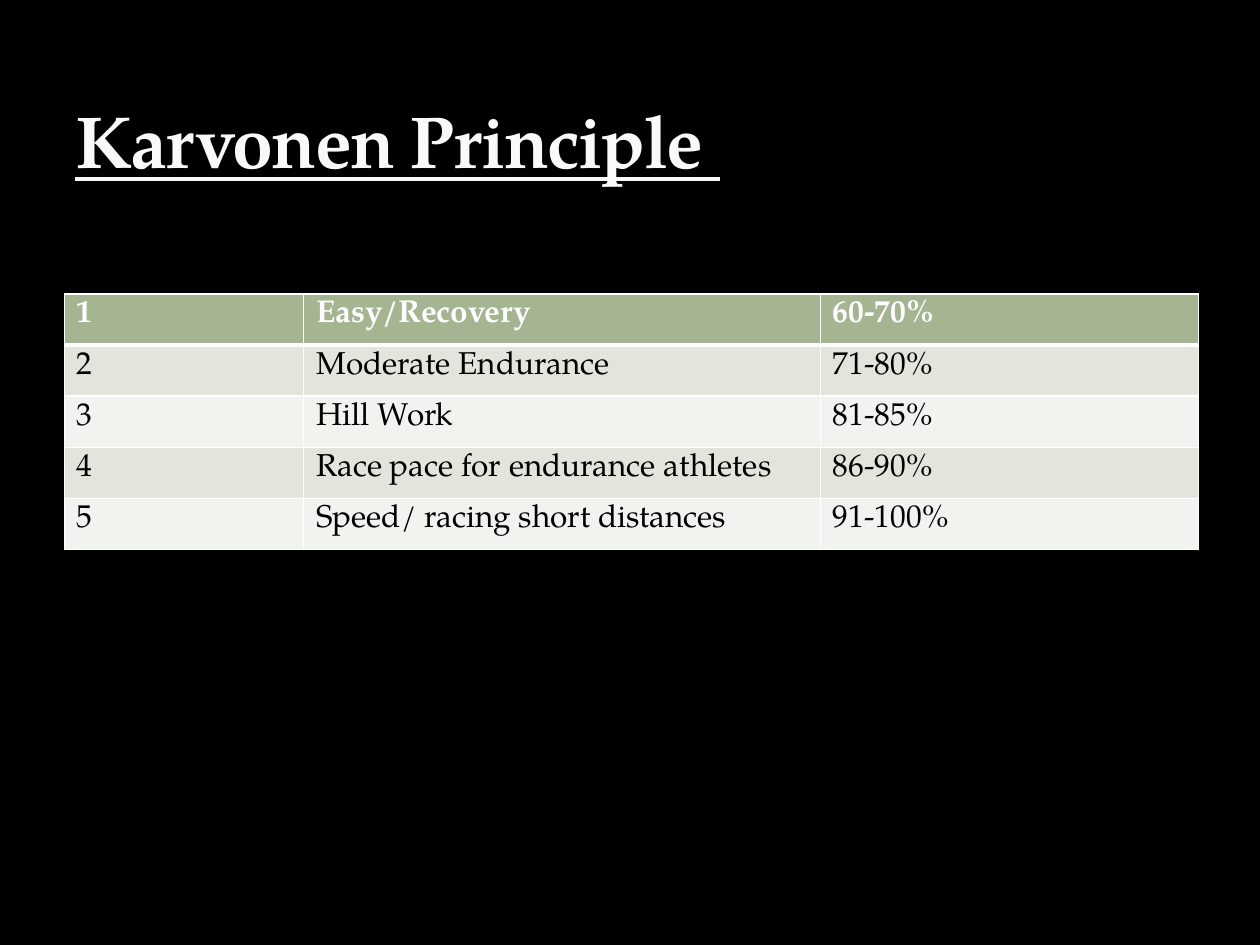
from lxml.etree import SubElement
from pptx import Presentation
from pptx.dml.color import RGBColor
from pptx.enum.text import MSO_ANCHOR
from pptx.oxml.ns import qn
from pptx.util import Pt

FONT = "TeX Gyre Pagella"
COLORS = {
    "background": "000000",
    "title": "F9F9F9",
    "header": "A5B592",
    "odd_band": "E1E5DC",
    "even_band": "F0F3EE",
    "header_text": "FFFFFF",
    "body_text": "000000",
    "border": "FFFFFF",
}
ZONES = [
    ("1", "Easy/Recovery", "60-70%"),
    ("2", "Moderate Endurance", "71-80%"),
    ("3", "Hill Work", "81-85%"),
    ("4", "Race pace for endurance athletes", "86-90%"),
    ("5", "Speed/ racing short distances", "91-100%"),
]
COLUMN_SHARES = (1.9, 4.1, 3)


def color(name):
    return RGBColor.from_string(COLORS[name])


def write_run(paragraph, text, color_name, **formats):
    run = paragraph.add_run()
    run.text = text
    run.font.color.rgb = color(color_name)
    for attribute, value in {"name": FONT, **formats}.items():
        setattr(run.font, attribute, value)
    return run


def set_borders(cell, widths):
    properties = cell._tc.get_or_add_tcPr()
    # Border lines come before the fill in the cell properties
    for position, (side, width) in enumerate(widths.items()):
        line = SubElement(properties, qn(f"a:{side}"), w=str(Pt(width)))
        fill = SubElement(line, qn("a:solidFill"))
        SubElement(fill, qn("a:srgbClr"), val=COLORS["border"])
        properties.insert(position, line)


def add_title(slide, text, left, top, width, height):
    frame = slide.shapes.add_textbox(left, top, width, height).text_frame
    frame.word_wrap = True
    frame.vertical_anchor = MSO_ANCHOR.BOTTOM
    run = write_run(frame.paragraphs[0], text, "title",
                    size=Pt(42), bold=True, underline=True)
    run.font._element.set("spc", "-100")  # tighten letters by 1 pt


def add_zone_table(slide, zones, left, top, width, height):
    table = slide.shapes.add_table(
        len(zones), len(COLUMN_SHARES), left, top, width, height).table
    for column, share in zip(table.columns, COLUMN_SHARES):
        column.width = int(width * share / sum(COLUMN_SHARES))

    for row_index, zone in enumerate(zones):
        is_header = row_index == 0
        band = ("header" if is_header
                else "odd_band" if row_index % 2 else "even_band")
        text_color = "header_text" if is_header else "body_text"
        widths = {"lnL": 1, "lnR": 1,
                  "lnT": 3 if row_index == 1 else 1,
                  "lnB": 3 if is_header else 1}
        for column_index, text in enumerate(zone):
            cell = table.cell(row_index, column_index)
            cell.fill.solid()
            cell.fill.fore_color.rgb = color(band)
            write_run(cell.text_frame.paragraphs[0], text, text_color,
                      size=Pt(18), bold=is_header)
            set_borders(cell, widths)


def main():
    presentation = Presentation()
    presentation.slide_width, presentation.slide_height = Pt(720), Pt(540)
    slide = presentation.slides.add_slide(presentation.slide_layouts[6])
    background = slide.background.fill
    background.solid()
    background.fore_color.rgb = color("background")

    # The trailing space carries the underline past the last word
    add_title(slide, "Karvonen Principle ", Pt(36), Pt(12), Pt(648), Pt(96))
    add_zone_table(slide, ZONES, Pt(36.75), Pt(168), Pt(648), Pt(146))
    presentation.save("out.pptx")


if __name__ == "__main__":
    main()
